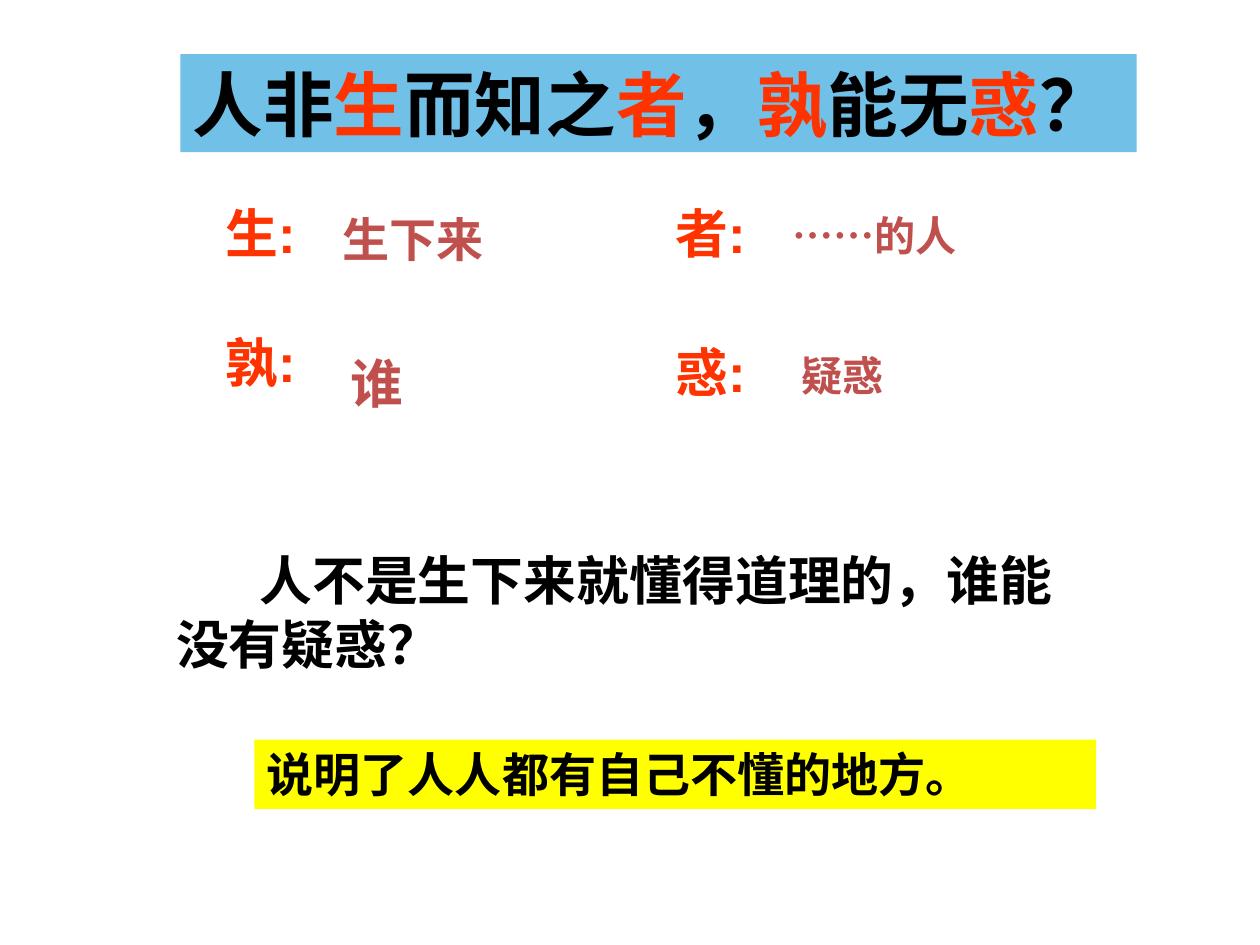
"""Build a slide that glosses a line of classical Chinese."""
from dataclasses import dataclass

from pptx import Presentation
from pptx.dml.color import RGBColor
from pptx.enum.shapes import MSO_SHAPE
from pptx.enum.text import MSO_ANCHOR, MSO_AUTO_SIZE, PP_ALIGN
from pptx.util import Pt


@dataclass(frozen=True)
class Theme:
    font: str = "Arial"
    ink: str = "000000"
    key: str = "FF3300"
    gloss: str = "C0504D"
    banner: str = "71C0E7"
    note: str = "FFFF00"
    title: float = 40.3
    body: float = 30.2
    medium: float = 26.9
    small: float = 23.5


class SlideBuilder:
    def __init__(self, slide, theme):
        self.s = slide
        self.theme = theme

    def add_runs(self, sp, runs, size, wrap=True, anchor=MSO_ANCHOR.TOP, indent=0):
        tf = sp.text_frame
        frame = {"word_wrap": wrap, "auto_size": MSO_AUTO_SIZE.SHAPE_TO_FIT_TEXT,
                 "vertical_anchor": anchor}
        for name, value in frame.items():
            setattr(tf, name, value)
        p = tf.paragraphs[0]
        p.alignment = PP_ALIGN.LEFT
        if indent:
            p._p.get_or_add_pPr().set("indent", str(Pt(indent)))
        for text, color in runs:
            r = p.add_run()
            r.text = text
            style = {"name": self.theme.font, "size": Pt(size), "bold": True}
            for name, value in style.items():
                setattr(r.font, name, value)
            r.font.color.rgb = RGBColor.from_string(color)

    def text(self, box, runs, size, **layout):
        sp = self.s.shapes.add_textbox(*map(Pt, box))
        self.add_runs(sp, runs, size, **layout)

    def band(self, box, fill, runs, size, **layout):
        sp = self.s.shapes.add_shape(MSO_SHAPE.RECTANGLE, *map(Pt, box))
        sp.shadow.inherit = False
        sp.fill.solid()
        sp.fill.fore_color.rgb = RGBColor.from_string(fill)
        sp.line.fill.background()
        self.add_runs(sp, runs, size, **layout)


def main():
    prs = Presentation()
    prs.slide_width, prs.slide_height = Pt(720), Pt(540)
    t = Theme()
    b = SlideBuilder(prs.slides.add_slide(prs.slide_layouts[6]), t)

    phrases = ["人非", "生", "而知之", "者", "，", "孰", "能无", "惑", "？"]
    title = [(text, t.key if i % 2 else t.ink) for i, text in enumerate(phrases)]
    b.band((103, 31, 546.5, 56), t.banner, title, t.title,
           wrap=False, anchor=MSO_ANCHOR.MIDDLE)

    b.text((93.6, 309.6, 537.8, 80.6),
           [("人不是生下来就懂得道理的，谁能没有疑惑？", t.ink)], t.body, indent=47.5)

    glossary = [
        ("生:", 121.7, 110.9, "生下来", (188.6, 116.6, 104.4, 39.6), t.medium),
        ("者:", 378.7, 110.9, "……的人", (445.7, 116.6, 128.9, 36), t.small),
        ("孰:", 121.7, 185, "谁", (193, 196.6, 90.7, 43.9), t.body),
        ("惑:", 378.7, 190.8, "疑惑", (450.7, 196.6, 80.6, 36), t.small),
    ]
    for word, left, top, meaning, box, size in glossary:
        b.text((left, top, 55.4, 43.9), [(word, t.key)], t.body, wrap=False)
        b.text(box, [(meaning, t.gloss)], size)

    b.band((145.4, 422.6, 481, 39.6), t.note,
           [("说明了人人都有自己不懂的地方。", t.ink)], t.medium)
    prs.save("out.pptx")


if __name__ == "__main__":
    main()
